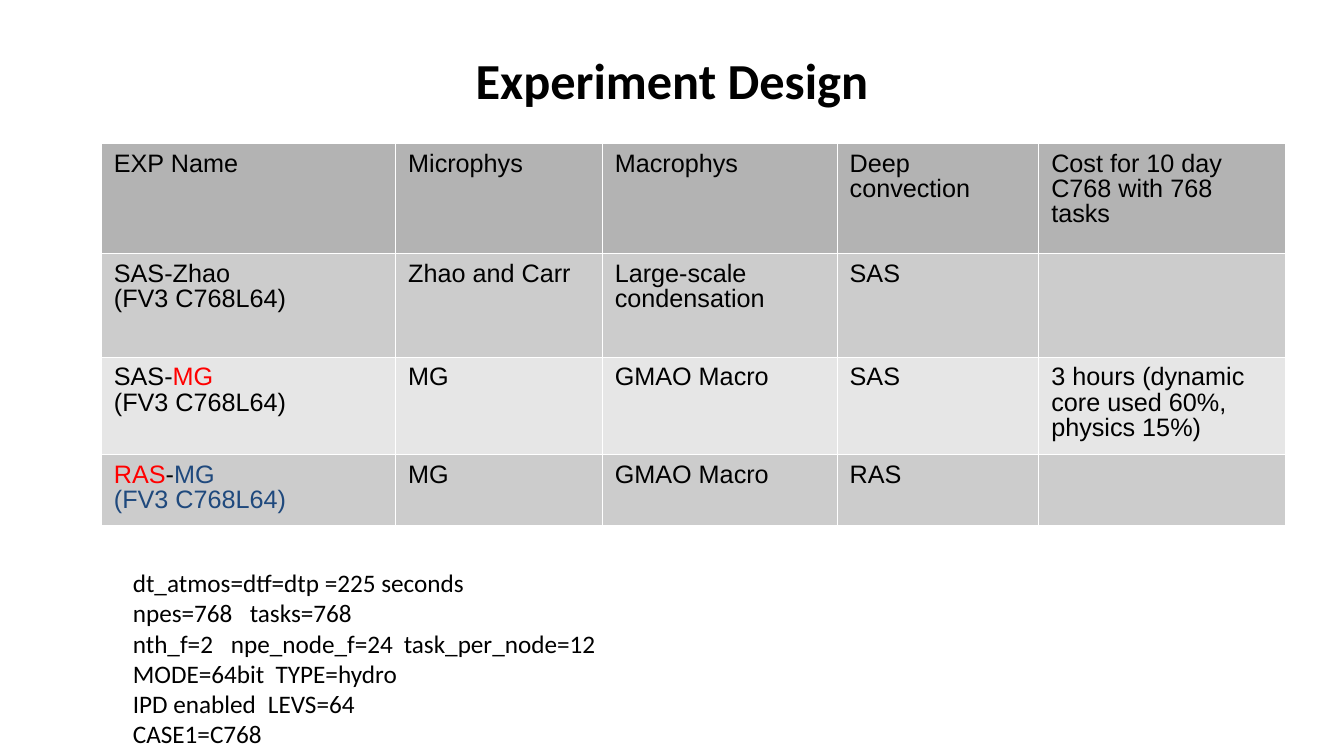
from dataclasses import dataclass

from lxml.etree import SubElement
from pptx import Presentation
from pptx.dml.color import RGBColor
from pptx.enum.text import MSO_ANCHOR, PP_ALIGN
from pptx.oxml.ns import qn
from pptx.slide import Slide
from pptx.table import _Cell
from pptx.text.text import _Paragraph, _Run
from pptx.util import Pt

BLACK, WHITE, RED, NAVY = "000000", "FFFFFF", "FF0000", "1F497D"
COL_WIDTHS = (210.24, 147.6, 167.76, 144, 176.4)


@dataclass(frozen=True)
class Span:
    text: str
    color: str = BLACK


@dataclass(frozen=True)
class Row:
    height: float
    fill: str
    name: tuple[tuple[Span, ...], ...]
    values: tuple[str, ...]


@dataclass(frozen=True)
class Setting:
    text: str
    stops: tuple[float, ...] = ()


GRID = "(FV3 C768L64)"
ROWS = (
    Row(78.48, "B3B3B3", ((Span("EXP Name"),),),
        ("Microphys", "Macrophys", "Deep convection",
         "Cost for 10 day C768 with 768 tasks")),
    Row(74.16, "CCCCCC", ((Span("SAS-Zhao"),), (Span(GRID),)),
        ("Zhao and Carr", "Large-scale condensation", "SAS", "")),
    Row(69.84, "E6E6E6", ((Span("SAS-"), Span("MG", RED)), (Span(GRID),)),
        ("MG", "GMAO Macro", "SAS",
         "3 hours (dynamic core used 60%, physics 15%)")),
    Row(50.4, "CCCCCC",
        ((Span("RAS", RED), Span("-"), Span("MG", NAVY)), (Span(GRID, NAVY),)),
        ("MG", "GMAO Macro", "RAS", "")),
)
SETTINGS = (
    Setting("dt_atmos=dtf=dtp =225 seconds"),
    Setting("npes=768\ttasks=768", (83.5,)),
    Setting("nth_f=2\tnpe_node_f=24\ttask_per_node=12", (70, 193.5)),
    Setting("MODE=64bit\tTYPE=hydro", (102,)),
    Setting("IPD enabled\tLEVS=64", (96.5,)),
    Setting("CASE1=C768"),
)


def rgb(value: str) -> RGBColor:
    return RGBColor.from_string(value)


def style_run(r: _Run, font: str, size: float, color: str = BLACK,
              bold: bool = False) -> None:
    r.font.name = font
    r.font.size = Pt(size)
    r.font.bold = bold
    r.font.color.rgb = rgb(color)


def add_tab_stops(p: _Paragraph, stops: tuple[float, ...]) -> None:
    if stops:
        tabs = SubElement(p._p.get_or_add_pPr(), qn("a:tabLst"))
        for stop in stops:
            SubElement(tabs, qn("a:tab"), pos=str(Pt(stop)), algn="l")


def add_title(s: Slide) -> None:
    tf = s.shapes.add_textbox(0, 0, Pt(960), Pt(113.76)).text_frame
    tf.word_wrap = True
    tf.vertical_anchor = MSO_ANCHOR.MIDDLE
    p = tf.paragraphs[0]
    p.text = "Experiment Design"
    p.alignment = PP_ALIGN.CENTER
    style_run(p.runs[0], "Calibri", 36, bold=True)


def style_cell(cell: _Cell, fill: str) -> None:
    cell.margin_left = cell.margin_right = Pt(9.36)
    cell.margin_top, cell.margin_bottom = Pt(6.48), Pt(3.6)
    tc_pr = cell._tc.get_or_add_tcPr()
    for side in ("lnL", "lnR", "lnT", "lnB"):
        ln = SubElement(tc_pr, qn(f"a:{side}"), w=str(Pt(0.06)))
        SubElement(SubElement(ln, qn("a:solidFill")), qn("a:srgbClr"), val=WHITE)
    cell.fill.solid()
    cell.fill.fore_color.rgb = rgb(fill)


def fill_cell(cell: _Cell, lines: tuple[tuple[Span, ...], ...]) -> None:
    tf = cell.text_frame
    tf.text = "\n".join("" for _ in lines)
    for p, spans in zip(tf.paragraphs, lines):
        p.line_spacing = 0.89
        for span in spans:
            r = p.add_run()
            r.text = span.text
            style_run(r, "Arial", 18, span.color)


def add_experiments(s: Slide) -> None:
    table = s.shapes.add_table(
        len(ROWS), len(COL_WIDTHS), Pt(72), Pt(102.24),
        Pt(sum(COL_WIDTHS)), Pt(sum(row.height for row in ROWS))).table
    table.first_row = table.horz_banding = False
    for column, width in zip(table.columns, COL_WIDTHS):
        column.width = Pt(width)
    for i, row in enumerate(ROWS):
        table.rows[i].height = Pt(row.height)
        contents = (row.name, *(((Span(v),),) if v else () for v in row.values))
        for cell, lines in zip(table.rows[i].cells, contents):
            style_cell(cell, row.fill)
            if lines:
                fill_cell(cell, lines)


def add_settings(s: Slide) -> None:
    tf = s.shapes.add_textbox(Pt(87.84), Pt(401.76), Pt(480.24), Pt(138.24)).text_frame
    tf.word_wrap = True
    tf.text = "\n".join(setting.text for setting in SETTINGS)
    for p, setting in zip(tf.paragraphs, SETTINGS):
        add_tab_stops(p, setting.stops)
        for r in p.runs:
            style_run(r, "Calibri", 18)


def main() -> None:
    prs = Presentation()
    prs.slide_width, prs.slide_height = Pt(960), Pt(540)
    s = prs.slides.add_slide(prs.slide_layouts[6])
    add_title(s)
    add_experiments(s)
    add_settings(s)
    prs.save("out.pptx")


if __name__ == "__main__":
    main()
